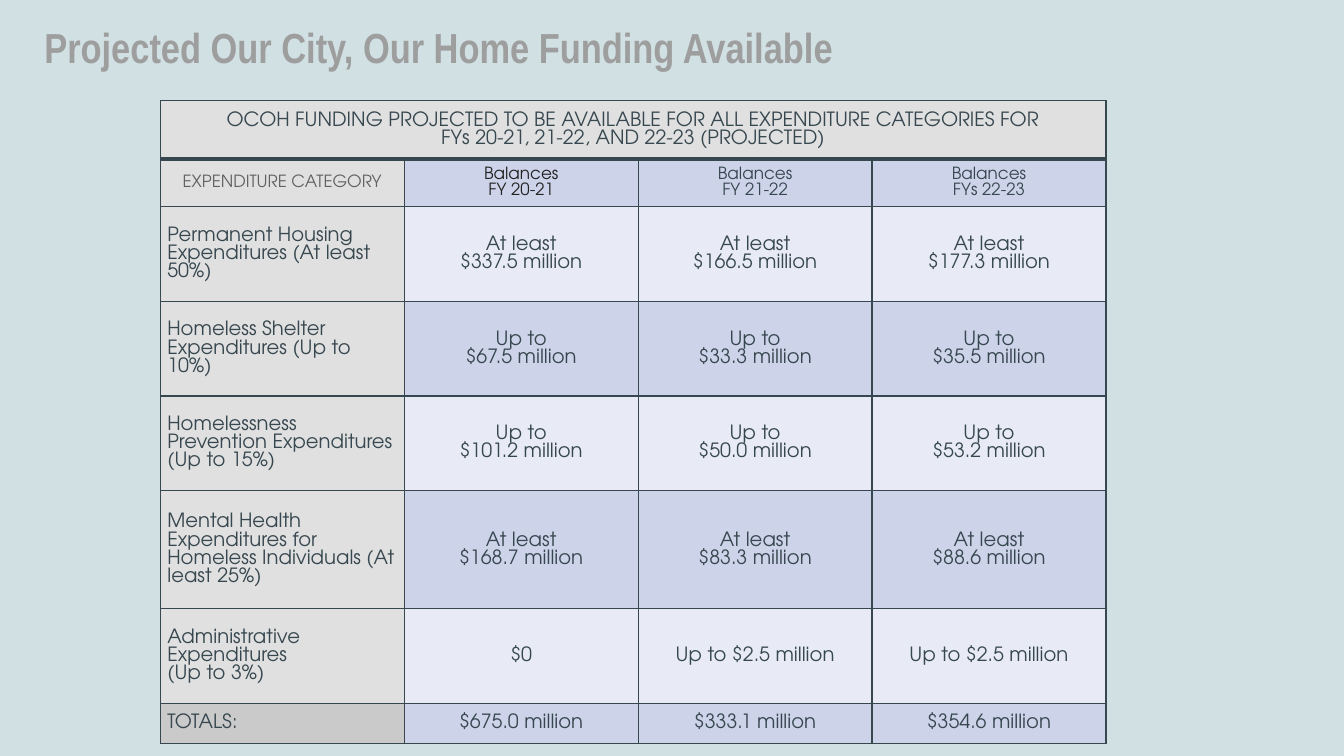
from lxml import etree
from pptx import Presentation
from pptx.dml.color import RGBColor
from pptx.enum.text import MSO_ANCHOR, MSO_AUTO_SIZE, PP_ALIGN
from pptx.oxml.ns import qn
from pptx.util import Inches, Pt

BACKGROUND = RGBColor(0xD0, 0xE0, 0xE3)
TITLE_GRAY = RGBColor(0x9E, 0x9E, 0x9E)
SLATE = RGBColor(0x37, 0x47, 0x4F)
LABEL_GRAY = RGBColor(0x61, 0x61, 0x61)
NEAR_BLACK = RGBColor(0x23, 0x23, 0x23)
GRAY = RGBColor(0xE0, 0xE0, 0xE0)
DARK_GRAY = RGBColor(0xCA, 0xCA, 0xCA)
BLUE = RGBColor(0xCD, 0xD4, 0xEA)
PALE_BLUE = RGBColor(0xE8, 0xEB, 0xF5)

TITLE_FONT = "Arial Narrow"
TABLE_FONT = "TeX Gyre Adventor"
COL_WIDTHS = [2.42, 2.32, 2.32, 2.32]
ROW_HEIGHTS = [0.58, 0.47, 0.94, 0.94, 0.94, 1.17, 0.94, 0.4]
ROWS = [
    ["OCOH FUNDING PROJECTED TO BE AVAILABLE FOR ALL EXPENDITURE CATEGORIES FOR\n"
     "FYs 20-21, 21-22, AND 22-23 (PROJECTED)"],
    ["EXPENDITURE CATEGORY", "Balances\nFY 20-21", "Balances\nFY 21-22", "Balances\nFYs 22-23"],
    ["Permanent Housing Expenditures (At least 50%)",
     "At least\n$337.5 million", "At least\n$166.5 million", "At least\n$177.3 million"],
    ["Homeless Shelter Expenditures (Up to 10%)",
     "Up to\n$67.5 million", "Up to\n$33.3 million", "Up to\n$35.5 million"],
    ["Homelessness Prevention Expenditures (Up to 15%)",
     "Up to\n$101.2 million", "Up to\n$50.0 million", "Up to\n$53.2 million"],
    ["Mental Health Expenditures for Homeless Individuals (At least 25%)",
     "At least\n$168.7 million", "At least\n$83.3 million", "At least\n$88.6 million"],
    ["Administrative Expenditures\n(Up to 3%)", "$0", "Up to $2.5 million", "Up to $2.5 million"],
    ["TOTALS:", "$675.0 million", "$333.1 million", "$354.6 million"],
]
HEADING_ROW, COLUMN_ROW, TOTALS_ROW = 0, 1, len(ROWS) - 1


def format_runs(p, font, size, color, bold=False):
    for r in p.runs:
        r.font.name = font
        r.font.size = Pt(size)
        r.font.color.rgb = color
        r.font.bold = bold


def add_title(s, text):
    sp = s.shapes.title
    sp.left, sp.top = Inches(0.34), Inches(0.16)
    sp.width, sp.height = Inches(9.37), Inches(0.68)
    tf = sp.text_frame
    tf.text = text
    tf.word_wrap = True
    tf.auto_size = MSO_AUTO_SIZE.NONE
    tf.vertical_anchor = MSO_ANCHOR.MIDDLE
    p = tf.paragraphs[0]
    p.alignment = PP_ALIGN.LEFT
    p.line_spacing = 0.9
    format_runs(p, TITLE_FONT, 30, TITLE_GRAY, bold=True)


def set_borders(cell, top, bottom):
    """Draw the four cell edges; top and bottom are widths in points."""
    tc_pr = cell._tc.get_or_add_tcPr()
    edges = [("lnL", 1), ("lnR", 1), ("lnT", top), ("lnB", bottom)]
    for i, (tag, width) in enumerate(edges):
        ln = etree.Element(qn(f"a:{tag}"), w=str(Pt(width)))
        fill = etree.SubElement(ln, qn("a:solidFill"))
        etree.SubElement(fill, qn("a:srgbClr"), val=str(SLATE))
        tc_pr.insert(i, ln)


def cell_fill(row, col):
    if row == HEADING_ROW:
        return GRAY
    if col == 0:
        return DARK_GRAY if row == TOTALS_ROW else GRAY
    return BLUE if row % 2 or row == TOTALS_ROW else PALE_BLUE


def cell_color(row, col):
    if row == COLUMN_ROW:
        return {0: LABEL_GRAY, 1: NEAR_BLACK}.get(col, SLATE)
    return SLATE


def fill_cell(cell, row, col, text):
    cell.fill.solid()
    cell.fill.fore_color.rgb = cell_fill(row, col)
    cell.vertical_anchor = MSO_ANCHOR.MIDDLE
    cell.margin_left = cell.margin_right = Inches(0.07)
    cell.margin_top = cell.margin_bottom = 0
    cell.text_frame.text = text
    is_label = col == 0 and row > COLUMN_ROW
    for p in cell.text_frame.paragraphs:
        p.alignment = PP_ALIGN.LEFT if is_label else PP_ALIGN.CENTER
        format_runs(p, TABLE_FONT, 12 if row == COLUMN_ROW else 14, cell_color(row, col))
    set_borders(cell, top=3 if row == COLUMN_ROW else 1, bottom=3 if row == HEADING_ROW else 1)


def add_funding_table(s):
    frame = s.shapes.add_table(len(ROWS), len(COL_WIDTHS), Inches(1.59), Inches(1),
                               Inches(sum(COL_WIDTHS)), Inches(sum(ROW_HEIGHTS)))
    table = frame.table
    for column, width in zip(table.columns, COL_WIDTHS):
        column.width = Inches(width)
    for row, height in zip(table.rows, ROW_HEIGHTS):
        row.height = Inches(height)
    table.cell(HEADING_ROW, 0).merge(table.cell(HEADING_ROW, len(COL_WIDTHS) - 1))
    for row, texts in enumerate(ROWS):
        for col in range(len(COL_WIDTHS)):
            text = texts[col] if col < len(texts) else ""
            fill_cell(table.cell(row, col), row, col, text)


def main():
    prs = Presentation()
    prs.slide_width, prs.slide_height = Inches(13.33), Inches(7.5)
    s = prs.slides.add_slide(prs.slide_layouts[5])
    s.background.fill.solid()
    s.background.fill.fore_color.rgb = BACKGROUND
    add_title(s, "Projected Our City, Our Home Funding Available")
    add_funding_table(s)
    prs.save("out.pptx")


if __name__ == "__main__":
    main()
